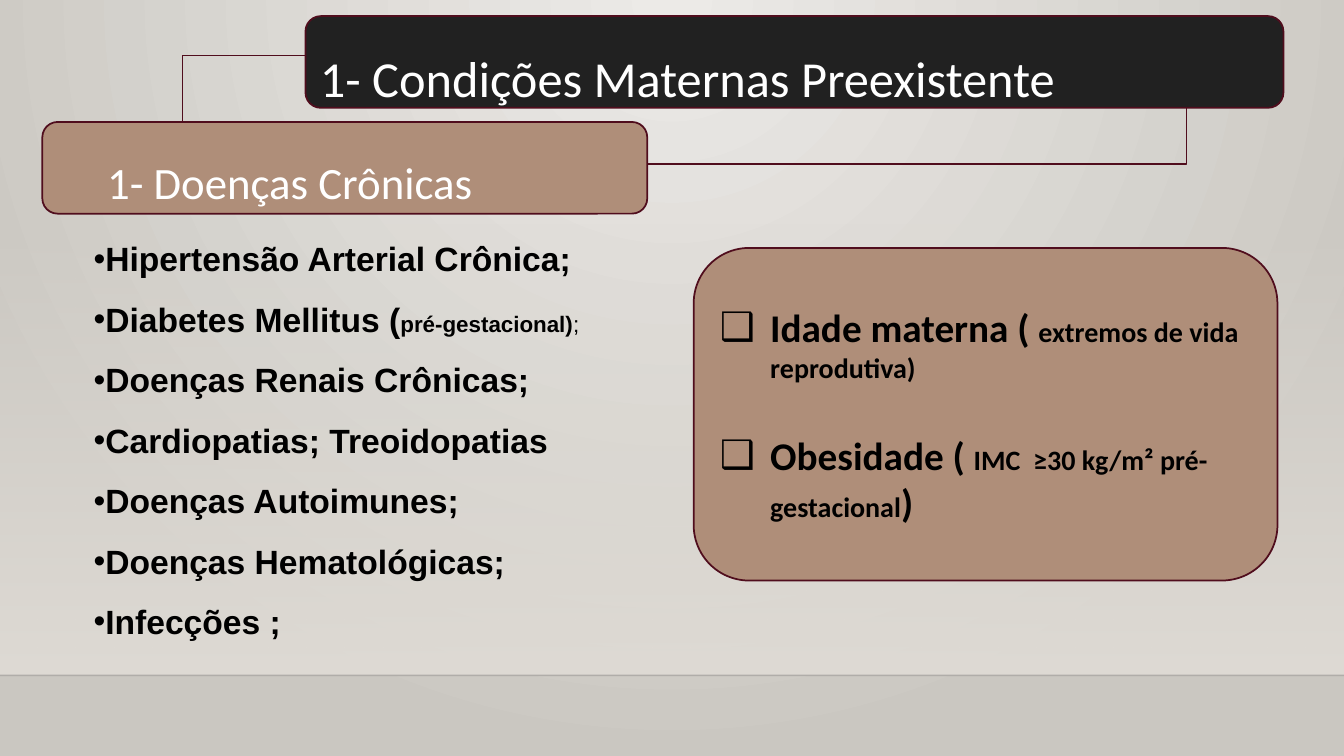
from lxml.etree import SubElement
from pptx import Presentation
from pptx.dml.color import RGBColor
from pptx.enum.shapes import MSO_CONNECTOR, MSO_SHAPE
from pptx.enum.text import MSO_ANCHOR, MSO_AUTO_SIZE, PP_ALIGN
from pptx.oxml import parse_xml
from pptx.oxml.ns import nsdecls, qn
from pptx.util import Inches, Pt

BLACK = RGBColor(0, 0, 0)
WHITE = RGBColor(0xFF, 0xFF, 0xFF)
CHARCOAL = RGBColor(0x21, 0x21, 0x21)
TAN = RGBColor(0xAF, 0x8E, 0x79)
WINE = RGBColor(0x50, 0x0D, 0x1D)
HORIZON = RGBColor(0, 0, 1)

WIDTH, HEIGHT, FLOOR = 13.33, 7.5, 6.7

BACKGROUND = """<a:gradFill %s rotWithShape="1"><a:gsLst>
<a:gs pos="0"><a:srgbClr val="ECEAE7"/></a:gs>
<a:gs pos="100000"><a:srgbClr val="CAC7C1"/></a:gs></a:gsLst>
<a:path path="circle"><a:fillToRect l="43000" t="0" r="43000" b="100000"/></a:path>
</a:gradFill>""" % nsdecls("a")
WALL_FADE = """<a:gradFill %s rotWithShape="1"><a:gsLst>
<a:gs pos="0"><a:srgbClr val="DFDBD5"><a:alpha val="0"/></a:srgbClr></a:gs>
<a:gs pos="100000"><a:srgbClr val="DFDBD5"/></a:gs></a:gsLst>
<a:lin ang="5400000" scaled="0"/></a:gradFill>""" % nsdecls("a")

# Each paragraph is a list of runs: (text, size) or (text, size, overrides)
TITLE = [[("1- Condições Maternas Preexistente", 36)]]
SUBTITLE = [[("1- Doenças Crônicas", 32)]]
DISEASES = [
    [("Hipertensão Arterial Crônica;", 24)],
    [("Diabetes Mellitus (", 24), ("pré-gestacional)", 16), (";", 16, {"bold": False})],
    [("Doenças Renais Crônicas;", 24)],
    [("Cardiopatias; Treoidopatias", 24)],
    [("Doenças Autoimunes;", 24)],
    [("Doenças Hematológicas;", 24)],
    [("Infecções ;", 24)],
]
RISKS = [
    [("Idade materna ( ", 28), ("extremos de vida reprodutiva)", 20)],
    [("Obesidade ( ", 28), ("IMC  ≥30 kg/m² pré-gestacional", 20), (")", 28)],
]
HEADING = {"name": "Calibri", "color": WHITE, "bold": False}
RISK_FONT = {"name": "Calibri", "color": BLACK, "bold": True}
DISEASE_FONT = {"name": "Arial", "color": BLACK, "bold": True}


def swap_fill(fill, xml):
    """Replace a gradient made by python-pptx with the given one."""
    fill.gradient()
    stops = fill.gradient_stops[0]._gs
    old = stops.getparent().getparent()
    old.getparent().replace(old, parse_xml(xml))


def add_box(slide, kind, box, fill=None, line=WINE):
    sp = slide.shapes.add_shape(kind, *map(Inches, box))
    sp.shadow.inherit = False
    if fill is None:
        sp.fill.background()
    else:
        sp.fill.solid()
        sp.fill.fore_color.rgb = fill
    if line is None:
        sp.line.fill.background()
    else:
        sp.line.color.rgb = line
        sp.line.width = Pt(1.25)
    return sp


def write(sp, paragraphs, style, spacing=1.0, bullet=None, left=0, hanging=0, gap=0):
    tf = sp.text_frame
    tf.word_wrap = True
    tf.vertical_anchor = MSO_ANCHOR.MIDDLE
    for i, runs in enumerate(paragraphs):
        p = tf.add_paragraph() if i else tf.paragraphs[0]
        pPr = p._p.get_or_add_pPr()
        pPr.set("marL", str(Inches(left)))
        pPr.set("indent", str(Inches(-hanging)))
        if bullet:
            SubElement(pPr, qn("a:buFont"), typeface="Arial")
            SubElement(pPr, qn("a:buChar"), char=bullet)
        p.alignment = PP_ALIGN.LEFT
        p.line_spacing = spacing
        if i and gap:
            p.space_before = Pt(gap)
        for text, size, *overrides in runs:
            r = p.add_run()
            r.text = text
            look = {**style, "size": Pt(size), **(overrides[0] if overrides else {})}
            r.font.color.rgb = look.pop("color")
            for key, value in look.items():
                setattr(r.font, key, value)


def add_backdrop(slide):
    swap_fill(slide.background.fill, BACKGROUND)
    wall = add_box(slide, MSO_SHAPE.RECTANGLE, (0, 2.21, WIDTH, FLOOR - 2.21), line=None)
    swap_fill(wall.fill, WALL_FADE)
    edge = slide.shapes.add_connector(
        MSO_CONNECTOR.STRAIGHT, 0, Inches(FLOOR), Inches(WIDTH), Inches(FLOOR))
    edge.line.color.rgb = HORIZON
    edge.line.width = Pt(1)
    color = next(edge._element.spPr.iter(qn("a:srgbClr")))
    SubElement(color, qn("a:alpha"), val="20000")
    SubElement(edge._element.spPr, qn("a:effectLst"))


def main():
    prs = Presentation()
    prs.slide_width, prs.slide_height = Inches(WIDTH), Inches(HEIGHT)
    slide = prs.slides.add_slide(prs.slide_layouts[6])
    add_backdrop(slide)

    diseases = slide.shapes.add_textbox(*map(Inches, (0.83, 2.13, 5.19, 4.27)))
    write(diseases, DISEASES, DISEASE_FONT, spacing=1.5, bullet="•")
    diseases.text_frame.auto_size = MSO_AUTO_SIZE.SHAPE_TO_FIT_TEXT

    add_box(slide, MSO_SHAPE.RECTANGLE, (1.81, 0.55, 9.96, 1.08))
    rounded = MSO_SHAPE.ROUNDED_RECTANGLE
    title = add_box(slide, rounded, (3.03, 0.16, 9.7, 0.91), CHARCOAL)
    write(title, TITLE, HEADING, spacing=1.5)
    subtitle = add_box(slide, rounded, (0.42, 1.21, 6, 0.91), TAN)
    write(subtitle, SUBTITLE, HEADING, spacing=1.5, left=0.5)
    risks = add_box(slide, rounded, (6.88, 2.46, 5.79, 3.3), TAN)
    write(risks, RISKS, RISK_FONT, bullet="❑", left=0.5, hanging=0.5, gap=34)

    prs.save("out.pptx")


if __name__ == "__main__":
    main()
